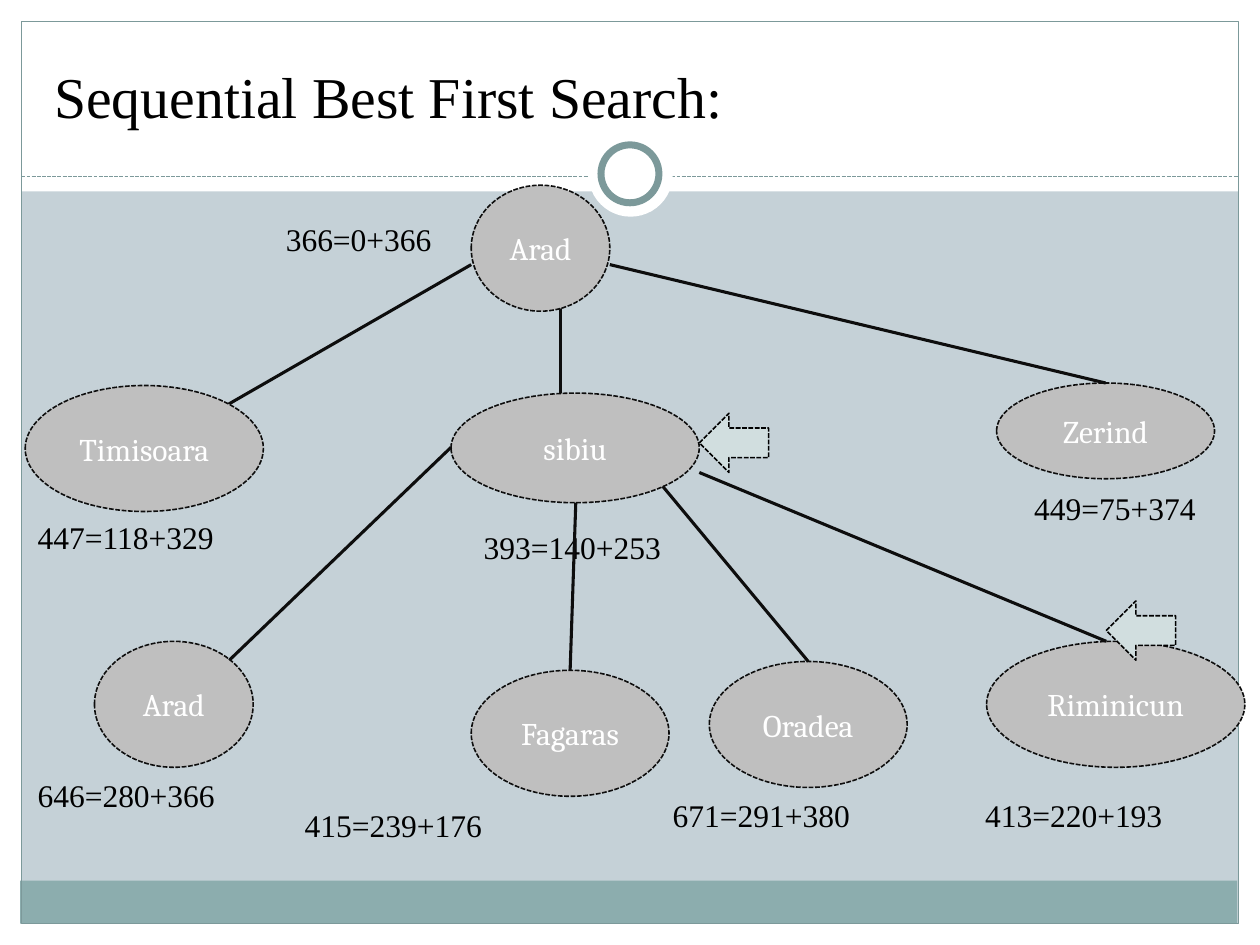
from lxml import etree
from pptx import Presentation
from pptx.dml.color import RGBColor
from pptx.enum.dml import MSO_LINE
from pptx.enum.shapes import MSO_CONNECTOR, MSO_SHAPE
from pptx.enum.text import MSO_ANCHOR, PP_ALIGN
from pptx.oxml.ns import qn
from pptx.util import Inches, Pt

OVAL, RECTANGLE, ARROW = MSO_SHAPE.OVAL, MSO_SHAPE.RECTANGLE, MSO_SHAPE.LEFT_ARROW
STRAIGHT = MSO_CONNECTOR.STRAIGHT
DASH = MSO_LINE.SQUARE_DOT
CENTER, LEFT = PP_ALIGN.CENTER, PP_ALIGN.LEFT
MIDDLE, BOTTOM = MSO_ANCHOR.MIDDLE, MSO_ANCHOR.BOTTOM
TITLE_ONLY = 5
TOP_SITE = 0

COLORS = {
    "background": "C5D1D7", "white": "FFFFFF", "black": "000000",
    "footer": "8CADAE", "frame": "7C999A", "node": "BFBFBF",
    "edge": "0D0D0D", "pointer": "D1DEDF",
}

MARGINS = [(0, 7.33, 10, 0.17), (0, 0, 10, 1.52), (0, 0, 0.17, 7.5), (9.83, 0, 0.17, 7.5)]
ROOT_EDGES = [((3.74, 2.1), (1.81, 3.21)), ((4.45, 2.41), (4.45, 3.2))]
NODES = [
    ("sibiu", 3.58, 3.12, 1.97, 0.87),
    ("Zerind", 7.91, 3.04, 1.73, 0.76),
    ("Arad", 3.74, 1.47, 1.1, 1),
    ("Timisoara", 0.2, 3.06, 1.89, 1),
    ("Fagaras", 3.74, 5.32, 1.57, 1),
    ("Oradea", 5.63, 5.25, 1.57, 1),
    ("Arad", 0.75, 5.09, 1.26, 1),
    ("Riminicun", 7.83, 5.09, 2.05, 1),
]
COSTS = [
    ("366=0+366", 2.17, 1.7, 1.57),
    ("393=140+253", 3.74, 4.14, 1.89),
    ("449=75+374", 8.11, 3.83, 1.89),
    ("447=118+329", 0.2, 4.06, 2.28),
    ("646=280+366", 0.2, 6.11, 2.28),
    ("415=239+176", 2.32, 6.35, 2.28),
    ("671=291+380", 5.24, 6.27, 2.28),
    ("413=220+193", 7.72, 6.27, 2.28),
]
# Start, end and, where the line meets the top of a node, that node's name
CHILD_EDGES = [
    ((4.84, 2.1), (8.78, 3.04), "Zerind"),
    ((3.58, 3.55), (1.82, 5.24), None),
    ((4.57, 3.99), (4.53, 5.32), "Fagaras"),
    ((5.26, 3.86), (6.42, 5.25), "Oradea"),
    ((5.55, 3.75), (8.78, 5.09), None),
]
POINTERS = [(5.55, 3.28), (8.78, 4.77)]


class SlideBuilder:
    body_font = "Times New Roman"
    node_font = "Cambria"
    text_size = 18

    def __init__(self, slide):
        self.slide = slide
        slide.background.fill.solid()
        slide.background.fill.fore_color.rgb = self.color("background")

    def color(self, name):
        return RGBColor.from_string(COLORS[name])

    def style_line(self, line, color, width, dash=None):
        line.color.rgb = self.color(color)
        line.width = Pt(width)
        if dash is not None:
            line.dash_style = dash

    def set_text(self, shape, text, font, size, color, align, anchor=None):
        frame = shape.text_frame
        frame.text = text
        frame.word_wrap = True
        if anchor is not None:
            frame.vertical_anchor = anchor
        paragraph = frame.paragraphs[0]
        paragraph.alignment = align
        paragraph.font.name = font
        paragraph.font.size = Pt(size)
        paragraph.font.color.rgb = self.color(color)

    def shape(self, kind, box, fill=None, line=None):
        """Draw a preset shape; line is (color, width) or (color, width, dash)."""
        shape = self.slide.shapes.add_shape(kind, *map(Inches, box))
        shape.shadow.inherit = False
        if fill:
            shape.fill.solid()
            shape.fill.fore_color.rgb = self.color(fill)
        else:
            shape.fill.background()
        if line:
            self.style_line(shape.line, *line)
        else:
            shape.line.fill.background()
        return shape

    def line(self, start, end, color="edge", width=1.75, dash=None):
        connector = self.slide.shapes.add_connector(STRAIGHT, *map(Inches, start + end))
        self.style_line(connector.line, color, width, dash)
        etree.SubElement(connector._element.spPr, qn("a:effectLst"))
        return connector

    def title(self, text):
        title = self.slide.shapes.title
        title.left, title.top, title.width, title.height = map(Inches, (0.33, 0.25, 9.33, 0.83))
        self.set_text(title, text, self.body_font, 33, "black", LEFT, BOTTOM)
        # Bring the title in front of the white margin
        self.slide.shapes._spTree.append(title._element)

    def node(self, name, *box):
        shape = self.shape(OVAL, box, "node", ("edge", 0.9, DASH))
        self.set_text(shape, name, self.node_font, self.text_size, "white", CENTER, MIDDLE)
        return shape

    def cost(self, text, left, top, width):
        box = self.slide.shapes.add_textbox(*map(Inches, (left, top, width, 0.4)))
        self.set_text(box, text, self.body_font, self.text_size, "black", LEFT)

    def pointer(self, left, top):
        self.shape(ARROW, (left, top, 0.55, 0.47), "pointer", ("black", 0.9, DASH))

    def frame(self):
        for box in MARGINS:
            self.shape(RECTANGLE, box, "white")
        self.shape(RECTANGLE, (0.16, 6.99, 9.66, 0.34), "footer")
        self.shape(RECTANGLE, (0.17, 0.17, 9.66, 7.16), line=("frame", 0.75))
        self.line((0.17, 1.4), (9.83, 1.4), "frame", 0.75, DASH)
        self.shape(OVAL, (4.67, 1.05, 0.67, 0.67), "white")
        self.shape(OVAL, (4.77, 1.15, 0.46, 0.46), "white", ("frame", 4))


def main():
    presentation = Presentation()
    presentation.slide_width, presentation.slide_height = Inches(10), Inches(7.5)
    layout = presentation.slide_layouts[TITLE_ONLY]
    builder = SlideBuilder(presentation.slides.add_slide(layout))

    builder.frame()
    builder.title("Sequential Best First Search:")
    for start, end in ROOT_EDGES:
        builder.line(start, end)
    nodes = {}
    for name, *box in NODES:
        nodes[name] = builder.node(name, *box)
    for cost in COSTS:
        builder.cost(*cost)
    for start, end, child in CHILD_EDGES:
        edge = builder.line(start, end)
        if child:
            edge.end_connect(nodes[child], TOP_SITE)
    for position in POINTERS:
        builder.pointer(*position)

    presentation.save("out.pptx")


if __name__ == "__main__":
    main()
